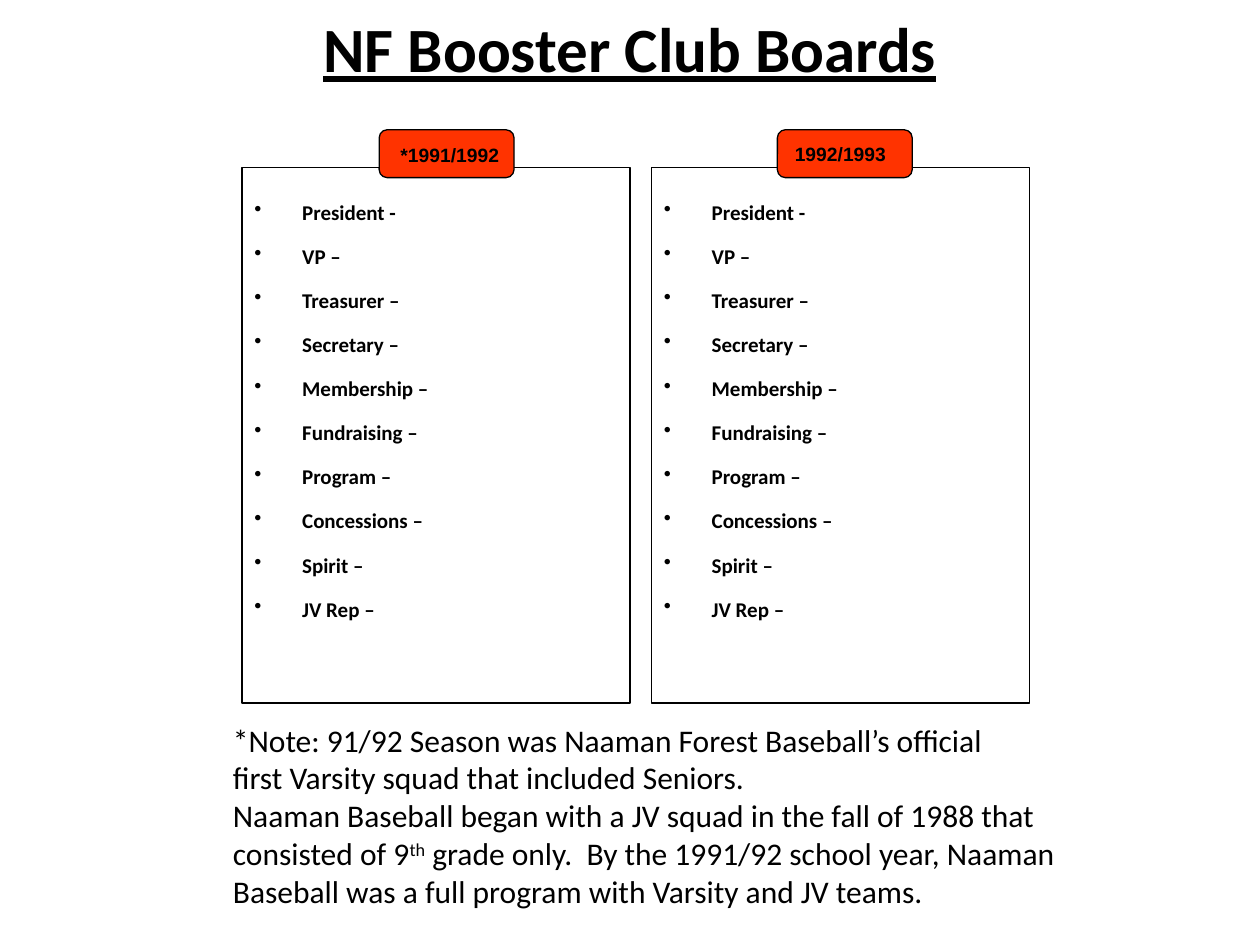
from dataclasses import dataclass

import pptx
import pptx.dml.color
import pptx.enum.shapes
import pptx.enum.text
import pptx.util
from lxml import etree
from pptx.util import Inches, Pt

BLACK = pptx.dml.color.RGBColor(0x00, 0x00, 0x00)
ORANGE = pptx.dml.color.RGBColor(0xFF, 0x33, 0x00)
SHAPE = pptx.enum.shapes.MSO_SHAPE
ALIGN = pptx.enum.text.PP_ALIGN
ANCHOR = pptx.enum.text.MSO_ANCHOR

ROLES = ["President -", "VP –", "Treasurer –", "Secretary –", "Membership –",
         "Fundraising –", "Program –", "Concessions –", "Spirit –", "JV Rep –"]
PANEL_TOP = 1.33
INDENT = Inches(0.38)


@dataclass
class Board:
    season: str
    left: float
    width: float
    badge_left: float
    label_left: float
    label_top: float
    label_width: float


BOARDS = [
    Board("*1991/1992", 1.92, 3.08, 3.01, 3.08, 1.09, 1.0),
    Board("1992/1993", 5.17, 3.0, 6.17, 6.21, 1.08, 0.96),
]


def add_outlined(s, kind, left: float, top: float, width: float, height: float):
    sp = s.shapes.add_shape(kind, Inches(left), Inches(top), Inches(width), Inches(height))
    sp.shadow.inherit = False
    sp.fill.background()
    sp.line.color.rgb = BLACK
    sp.line.width = Pt(0.75)
    return sp


def add_text(s, left: float, top: float, width: float, height: float, text: str,
             size: float, font: str = "Calibri", bold: bool = False, wrap: bool = True):
    tf = s.shapes.add_textbox(Inches(left), Inches(top), Inches(width), Inches(height)).text_frame
    tf.word_wrap = wrap
    tf.text = text
    for p in tf.paragraphs:
        for r in p.runs:
            style_run(r, size, font, bold)
    return tf


def style_run(r, size: float, font: str = "Calibri", bold: bool = False) -> None:
    r.font.size = Pt(size)
    r.font.name = font
    r.font.bold = bold
    r.font.color.rgb = BLACK


def add_bullet(p) -> None:
    """Give the paragraph a round bullet with a hanging indent."""
    pPr = p._p.get_or_add_pPr()
    pPr.set("marL", str(INDENT))
    pPr.set("indent", str(-INDENT))
    etree.SubElement(pPr, pptx.oxml.ns.qn("a:buChar")).set("char", "•")


def draw_board(s, board: Board) -> None:
    add_outlined(s, SHAPE.RECTANGLE, board.left, PANEL_TOP, board.width, 4.25)
    badge = add_outlined(s, SHAPE.ROUNDED_RECTANGLE, board.badge_left, 1.03, 1.07, 0.38)
    badge.fill.solid()
    badge.fill.fore_color.rgb = ORANGE
    add_text(s, board.label_left, board.label_top, board.label_width, 0.29,
             board.season, 11, "Arial", bold=True)

    tf = add_text(s, board.left, PANEL_TOP, 4.67, 6.08, "\n".join(ROLES), 12, bold=True)
    tf.margin_top = Inches(0.29)
    for p in tf.paragraphs:
        p.line_spacing = 0.8
        p.space_after = Pt(13.7)
        add_bullet(p)


def draw_note(s) -> None:
    tf = add_text(s, 1.75, 5.67, 6.91, 1.62,
                  "*Note: 91/92 Season was Naaman Forest Baseball’s official\v"
                  "first Varsity squad that included Seniors.\n"
                  "Naaman Baseball began with a JV squad in the fall of 1988 that\v"
                  "consisted of 9", 18, wrap=False)
    p = tf.paragraphs[-1]
    ordinal = p.add_run()
    ordinal.text = "th"
    style_run(ordinal, 18)
    ordinal.font._element.set("baseline", "30000")
    for i, line in enumerate([" grade only.  By the 1991/92 school year, Naaman",
                              "Baseball was a full program with Varsity and JV teams."]):
        if i:
            p.add_line_break()
        r = p.add_run()
        r.text = line
        style_run(r, 18)


def main() -> None:
    prs = pptx.Presentation()
    prs.slide_width, prs.slide_height = Inches(10), Inches(7.5)
    s = prs.slides.add_slide(prs.slide_layouts[6])

    title = add_text(s, 0.5, -0.25, 9, 1.25, "NF Booster Club Boards", 36, bold=True)
    title.vertical_anchor = ANCHOR.MIDDLE
    title.paragraphs[0].alignment = ALIGN.CENTER
    title.paragraphs[0].runs[0].font.underline = True

    for board in BOARDS:
        draw_board(s, board)
    draw_note(s)
    prs.save("out.pptx")


if __name__ == "__main__":
    main()
